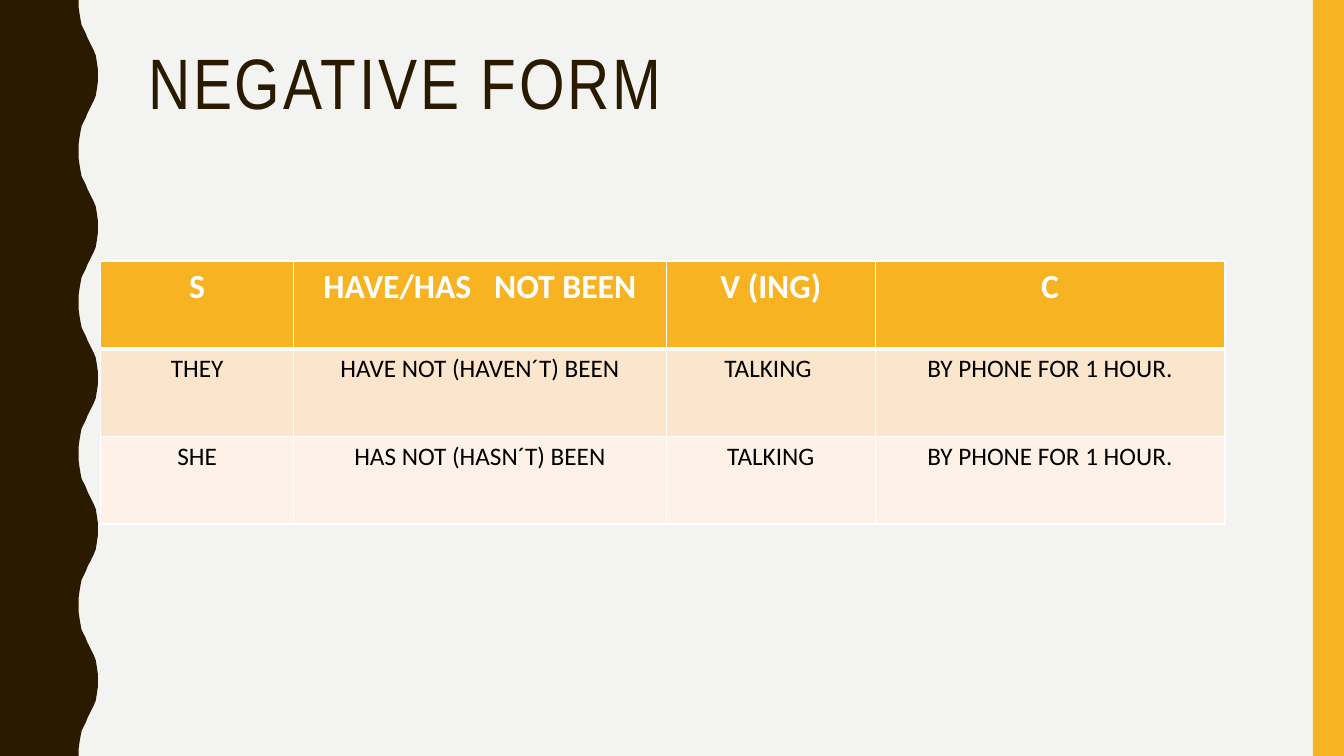
from dataclasses import dataclass

from lxml import etree
from pptx import Presentation
from pptx.dml.color import RGBColor
from pptx.enum.shapes import MSO_SHAPE
from pptx.enum.text import MSO_ANCHOR, MSO_AUTO_SIZE, PP_ALIGN
from pptx.oxml.ns import qn
from pptx.util import Inches, Pt

RECT = MSO_SHAPE.RECTANGLE
TOP = MSO_ANCHOR.TOP
FIXED = MSO_AUTO_SIZE.NONE
LEFT = PP_ALIGN.LEFT
CENTER = PP_ALIGN.CENTER

PAPER = RGBColor(0xF3, 0xF3, 0xF2)
BROWN = RGBColor(0x2A, 0x1A, 0x00)
GOLD = RGBColor(0xF8, 0xB3, 0x23)
PEACH = RGBColor(0xFC, 0xE5, 0xCD)
CREAM = RGBColor(0xFE, 0xF2, 0xE8)
WHITE = RGBColor(0xFF, 0xFF, 0xFF)
BLACK = RGBColor(0x00, 0x00, 0x00)

WIDTH, HEIGHT = 13.33, 7.5
PERIOD = 1.5
RISE = [
    (0.78, 0), (0.78, 0.07), (0.79, 0.14), (0.8, 0.2), (0.81, 0.25),
    (0.83, 0.29), (0.85, 0.33), (0.87, 0.38), (0.89, 0.42), (0.91, 0.46),
    (0.93, 0.5), (0.95, 0.55), (0.96, 0.61), (0.97, 0.68), (0.97, 0.75),
]
COLS = [1.91, 3.7, 2.07, 3.47]
ROW = 0.87


@dataclass
class Band:
    words: list[str]
    fill: RGBColor
    ink: RGBColor
    size: int
    bold: bool
    over: int
    under: int


BANDS = [
    Band(["S", "HAVE/HAS   NOT BEEN", "V (ING)", "C"],
         GOLD, WHITE, 24, True, 1, 3),
    Band(["THEY", "HAVE NOT (HAVEN´T) BEEN", "TALKING ", "BY PHONE FOR 1 HOUR."],
         PEACH, BLACK, 18, False, 3, 1),
    Band(["SHE", "HAS NOT (HASN´T) BEEN", "TALKING", "BY PHONE FOR 1 HOUR."],
         CREAM, BLACK, 18, False, 1, 1),
]


def paint(shape, color: RGBColor) -> None:
    shape.shadow.inherit = False
    shape.fill.solid()
    shape.fill.fore_color.rgb = color
    shape.line.fill.background()


def draw_wave(slide) -> None:
    fall = [(x, PERIOD - y) for x, y in reversed(RISE[1:-1])]
    edge = [(x, y + turn * PERIOD)
            for turn in range(round(HEIGHT / PERIOD)) for x, y in RISE + fall]
    edge += [(RISE[0][0], HEIGHT), (0, HEIGHT)]
    pen = slide.shapes.build_freeform(0, 0)
    pen.add_line_segments([(Inches(x), Inches(y)) for x, y in edge], close=True)
    paint(pen.convert_to_shape(), BROWN)


def draw_bar(slide) -> None:
    bar = slide.shapes.add_shape(
        RECT, Inches(13.02), 0, Inches(0.31), Inches(HEIGHT))
    paint(bar, GOLD)


def draw_title(slide, words: str) -> None:
    title = slide.shapes.title
    title.left, title.top = Inches(1.37), Inches(0.42)
    title.width, title.height = Inches(11.13), Inches(1.63)
    frame = title.text_frame
    frame.text = words
    frame.word_wrap = True
    frame.auto_size = FIXED
    frame.vertical_anchor = TOP
    para = frame.paragraphs[0]
    para.alignment = LEFT
    para.line_spacing = 0.9
    para.font.name = "Arial Narrow"
    para.font.size = Pt(51)
    para.font.color.rgb = BROWN
    para.runs[0]._r.get_or_add_rPr().set("spc", "200")


def add_edge(cell, side: str, width: int) -> None:
    line = etree.SubElement(
        cell._tc.get_or_add_tcPr(), qn(f"a:ln{side}"), w=str(Pt(width)))
    fill = etree.SubElement(line, qn("a:solidFill"))
    etree.SubElement(fill, qn("a:srgbClr"), val=str(WHITE))


def fill_cell(cell, words: str, band: Band) -> None:
    edges = {"L": 1, "R": 1, "T": band.over, "B": band.under}
    for side, width in edges.items():
        add_edge(cell, side, width)
    cell.fill.solid()
    cell.fill.fore_color.rgb = band.fill
    cell.text = words
    para = cell.text_frame.paragraphs[0]
    para.alignment = CENTER
    para.font.name = "Calibri"
    para.font.size = Pt(band.size)
    para.font.bold = band.bold
    para.font.color.rgb = band.ink


def draw_table(slide) -> None:
    table = slide.shapes.add_table(
        len(BANDS), len(COLS), Inches(1), Inches(2.59),
        Inches(sum(COLS)), Inches(ROW * len(BANDS))).table
    for col, width in zip(table.columns, COLS):
        col.width = Inches(width)
    for row, band in zip(table.rows, BANDS):
        row.height = Inches(ROW)
        for cell, words in zip(row.cells, band.words):
            fill_cell(cell, words, band)


def main() -> None:
    deck = Presentation()
    deck.slide_width, deck.slide_height = Inches(WIDTH), Inches(HEIGHT)
    slide = deck.slides.add_slide(deck.slide_layouts[5])
    slide.background.fill.solid()
    slide.background.fill.fore_color.rgb = PAPER
    draw_wave(slide)
    draw_bar(slide)
    draw_title(slide, "NEGATIVE FORM")
    draw_table(slide)
    deck.save("out.pptx")


if __name__ == "__main__":
    main()
